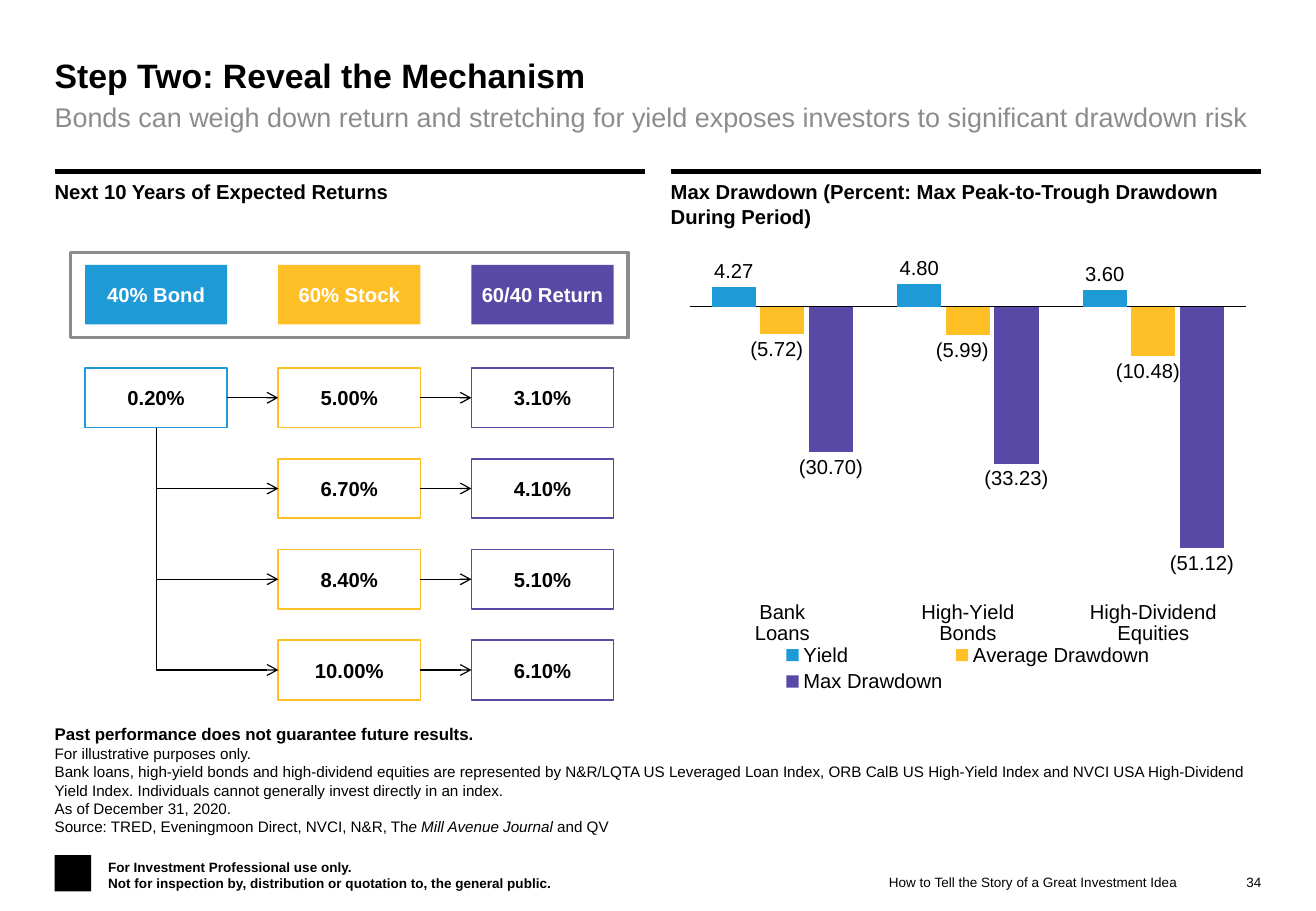
from lxml import etree
from pptx import Presentation
from pptx.chart.data import CategoryChartData
from pptx.dml.color import RGBColor
from pptx.enum.chart import XL_CHART_TYPE as ChartType, XL_LABEL_POSITION as LabelPosition
from pptx.enum.chart import XL_LEGEND_POSITION as LegendPosition, XL_TICK_LABEL_POSITION as TickLabel
from pptx.enum.chart import XL_TICK_MARK as TickMark
from pptx.enum.shapes import MSO_CONNECTOR as ConnectorType, MSO_SHAPE as ShapeType
from pptx.enum.text import MSO_ANCHOR as Anchor, PP_ALIGN as Align
from pptx.oxml import parse_xml
from pptx.oxml.ns import nsdecls, qn
from pptx.util import Inches, Pt

FONT = "Arial"
BLACK, WHITE, GRAY = "000000", "FFFFFF", "8C8C8C"
BLUE, YELLOW, PURPLE = "1E9BD7", "FFBF27", "5949A7"

TITLE = "Step Two: Reveal the Mechanism"
SUBTITLE = "Bonds can weigh down return and stretching for yield exposes investors to significant drawdown risk"
PANELS = [
    (0.45, "Next 10 Years of Expected Returns"),
    (5.52, "Max Drawdown (Percent: Max Peak-to-Trough Drawdown During Period)"),
]
COLUMNS = [
    (0.70, "40% Bond", BLUE, ["0.20%"]),
    (2.29, "60% Stock", YELLOW, ["5.00%", "6.70%", "8.40%", "10.00%"]),
    (3.88, "60/40 Return", PURPLE, ["3.10%", "4.10%", "5.10%", "6.10%"]),
]
CATEGORIES = ["Bank\nLoans", "High-Yield\nBonds", "High-Dividend\nEquities"]
SERIES = [
    ("Yield", BLUE, [4.27, 4.80, 3.60]),
    ("Average Drawdown", YELLOW, [-5.72, -5.99, -10.48]),
    ("Max Drawdown", PURPLE, [-30.70, -33.23, -51.12]),
]
NUMBER_FORMAT = r"0.00;\(0.00\)"
LABEL_SHIFT = -0.01
NOTES = [
    [("Past performance does not guarantee future results.", {"size": 10, "bold": True})],
    "For illustrative purposes only.",
    "Bank loans, high-yield bonds and high-dividend equities are represented by N&R/LQTA US Leveraged Loan Index, "
    "ORB CalB US High-Yield Index and NVCI USA High-Dividend Yield Index. "
    "Individuals cannot generally invest directly in an index.",
    "As of December 31, 2020.",
    [("Source: TRED, Eveningmoon Direct, NVCI, N&R, Th", {}),
     ("e Mill Avenue Journal ", {"italic": True}), ("and QV", {})],
]
DISCLAIMER = [
    "For Investment Professional use only.",
    "Not for inspection by, distribution or quotation to, the general public.",
]
FOOTER = "How to Tell the Story of a Great Investment Idea"
PAGE_NUMBER = "34"

BOX_WIDTH, BOX_HEIGHT = 1.17, 0.49
HEADER_TOP, FIRST_ROW_TOP, ROW_STEP = 2.18, 3.03, 0.747

presentation = Presentation()
presentation.slide_width, presentation.slide_height = Inches(10.83), Inches(7.5)
slide = presentation.slides.add_slide(presentation.slide_layouts[6])
shapes = slide.shapes


def color(hex_string):
    return RGBColor.from_string(hex_string)


def style_font(font, size=12, fill=BLACK, bold=False, italic=False):
    font.name, font.size, font.bold, font.italic = FONT, Pt(size), bold, italic
    font.color.rgb = color(fill)


def write(shape, paragraphs, align=Align.LEFT, anchor=Anchor.TOP, insets=(0, 0, 0, 0), **font):
    frame = shape.text_frame
    frame.word_wrap = True
    frame.vertical_anchor = anchor
    frame.margin_left, frame.margin_top, frame.margin_right, frame.margin_bottom = map(Inches, insets)
    for index, runs in enumerate(paragraphs):
        paragraph = frame.paragraphs[0] if index == 0 else frame.add_paragraph()
        paragraph.alignment = align
        for text, changes in [(runs, {})] if isinstance(runs, str) else runs:
            run = paragraph.add_run()
            run.text = text
            style_font(run.font, **{**font, **changes})


def add_text(paragraphs, left, top, width, height, **style):
    write(shapes.add_textbox(*map(Inches, (left, top, width, height))), paragraphs, **style)


def add_box(left, top, width, height, fill=None, line=None, weight=1, text=None, text_color=BLACK):
    shape = shapes.add_shape(ShapeType.RECTANGLE, *map(Inches, (left, top, width, height)))
    shape.shadow.inherit = False
    if fill:
        shape.fill.solid()
        shape.fill.fore_color.rgb = color(fill)
    else:
        shape.fill.background()
    if line:
        shape.line.color.rgb = color(line)
        shape.line.width = Pt(weight)
    else:
        shape.line.fill.background()
    if text:
        write(shape, [text], align=Align.CENTER, anchor=Anchor.MIDDLE,
              insets=(0.05,) * 4, fill=text_color, bold=True)
    return shape


def add_line(start=(0, 0), end=(0, 0), weight=0.75, kind=ConnectorType.STRAIGHT, arrow=False):
    connector = shapes.add_connector(kind, *map(Inches, (*start, *end)))
    connector.line.color.rgb = color(BLACK)
    connector.line.width = Pt(weight)
    if arrow:
        etree.SubElement(connector.line._get_or_add_ln(), qn("a:tailEnd"), type="arrow")
    etree.SubElement(connector._element.spPr, qn("a:effectLst"))
    return connector


def add_arrow(source, target):
    connector = add_line(arrow=True)
    connector.begin_connect(source, 3)
    connector.end_connect(target, 1)


def add_branch(source, target):
    connector = add_line(kind=ConnectorType.ELBOW, arrow=True)
    connector.begin_connect(source, 2)
    connector.end_connect(target, 1)
    start_x, start_y = source.left + source.width // 2, source.top + source.height
    across = target.left - start_x
    down = target.top + target.height // 2 - start_y
    connector.left = start_x + (across - down) // 2
    connector.top = start_y + (down - across) // 2
    connector.width, connector.height = down, across
    properties = connector._element.spPr
    transform = properties.find(qn("a:xfrm"))
    transform.set("rot", "16200000")
    transform.set("flipH", "1")
    transform.attrib.pop("flipV", None)
    properties.find(qn("a:prstGeom")).set("prst", "bentConnector2")


def add_drawdown_chart():
    data = CategoryChartData(number_format=NUMBER_FORMAT)
    data.categories = CATEGORIES
    for name, _, values in SERIES:
        data.add_series(name, values)
    chart = shapes.add_chart(ChartType.COLUMN_CLUSTERED, *map(Inches, (5.67, 2.06, 4.59, 3.68)), data).chart
    style_font(chart.font)
    chart.has_title = False
    chart.has_legend = True
    chart.legend.position = LegendPosition.BOTTOM
    chart.legend.include_in_layout = False
    style_font(chart.legend.font)

    category_axis, value_axis = chart.category_axis, chart.value_axis
    category_axis.tick_label_position = TickLabel.LOW
    category_axis.major_tick_mark = TickMark.NONE
    category_axis.format.line.color.rgb = color(BLACK)
    category_axis.format.line.width = Pt(0.75)
    style_font(category_axis.tick_labels.font)
    value_axis.minimum_scale, value_axis.maximum_scale, value_axis.major_unit = -60, 12, 2
    value_axis.has_major_gridlines = False
    value_axis.visible = False

    plot = chart.plots[0]
    plot.gap_width, plot.overlap, plot.vary_by_categories = 100, -10, False
    for series, (_, fill, _) in zip(plot.series, SERIES):
        series.invert_if_negative = False
        series.format.fill.solid()
        series.format.fill.fore_color.rgb = color(fill)
        labels = series.data_labels
        labels.show_value = True
        labels.number_format, labels.number_format_is_linked = NUMBER_FORMAT, False
        labels.position = LabelPosition.OUTSIDE_END
        style_font(labels.font)

    average = plot.series[1]
    for index in range(len(CATEGORIES)):
        label = average.points[index].data_label
        style_font(label.font)
        label.position = LabelPosition.OUTSIDE_END
    for label in average._element.iter(qn("c:dLbl")):
        label.insert(1, parse_xml(f'<c:layout {nsdecls("c")}><c:manualLayout><c:x val="{LABEL_SHIFT}"/>'
                                  '<c:y val="0"/></c:manualLayout></c:layout>'))

    plot_area = chart._chartSpace.chart.plotArea
    for layout in plot_area.findall(qn("c:layout")):
        plot_area.remove(layout)
    plot_area.insert(0, parse_xml(
        f'<c:layout {nsdecls("c")}><c:manualLayout><c:layoutTarget val="inner"/>'
        '<c:xMode val="edge"/><c:yMode val="edge"/><c:x val="0"/><c:y val="0"/>'
        '<c:w val="1"/><c:h val="0.76"/></c:manualLayout></c:layout>'))


add_text([TITLE], 0.45, 0.45, 9.93, 0.34, size=20, bold=True)
add_text([SUBTITLE], 0.45, 0.83, 9.93, 0.4, size=16, fill=GRAY)
for left, heading in PANELS:
    add_line((left, 1.41), (left + 4.86, 1.41), weight=3)
    add_text([heading], left, 1.43, 4.86, 0.54, insets=(0, 0.05, 0.05, 0.05), bold=True)

add_drawdown_chart()

add_box(0.58, 2.08, 4.59, 0.7, fill=WHITE, line=GRAY, weight=2.25)
box_columns = []
for left, header, accent, values in COLUMNS:
    add_box(left, HEADER_TOP, BOX_WIDTH, BOX_HEIGHT, fill=accent, text=header, text_color=WHITE)
    box_columns.append([
        add_box(left, FIRST_ROW_TOP + row * ROW_STEP, BOX_WIDTH, BOX_HEIGHT, line=accent, text=value)
        for row, value in enumerate(values)
    ])
(bond,), stocks, returns = box_columns
for stock, total in zip(stocks, returns):
    add_arrow(stock, total)
add_arrow(bond, stocks[0])
for stock in stocks[1:]:
    add_branch(bond, stock)

add_text(NOTES, 0.45, 5.95, 9.93, 0.93, anchor=Anchor.BOTTOM, size=9)
add_box(0.45, 7.04, 0.3, 0.3, fill=BLACK)
add_text(DISCLAIMER, 0.89, 7.07, 4.11, 0.27, anchor=Anchor.BOTTOM, size=8, bold=True)
for text, left, width in [(FOOTER, 6.91, 2.78), (PAGE_NUMBER, 10.06, 0.32)]:
    add_text([text], left, 7.19, width, 0.15, align=Align.RIGHT, anchor=Anchor.MIDDLE, size=8)

presentation.save("out.pptx")
